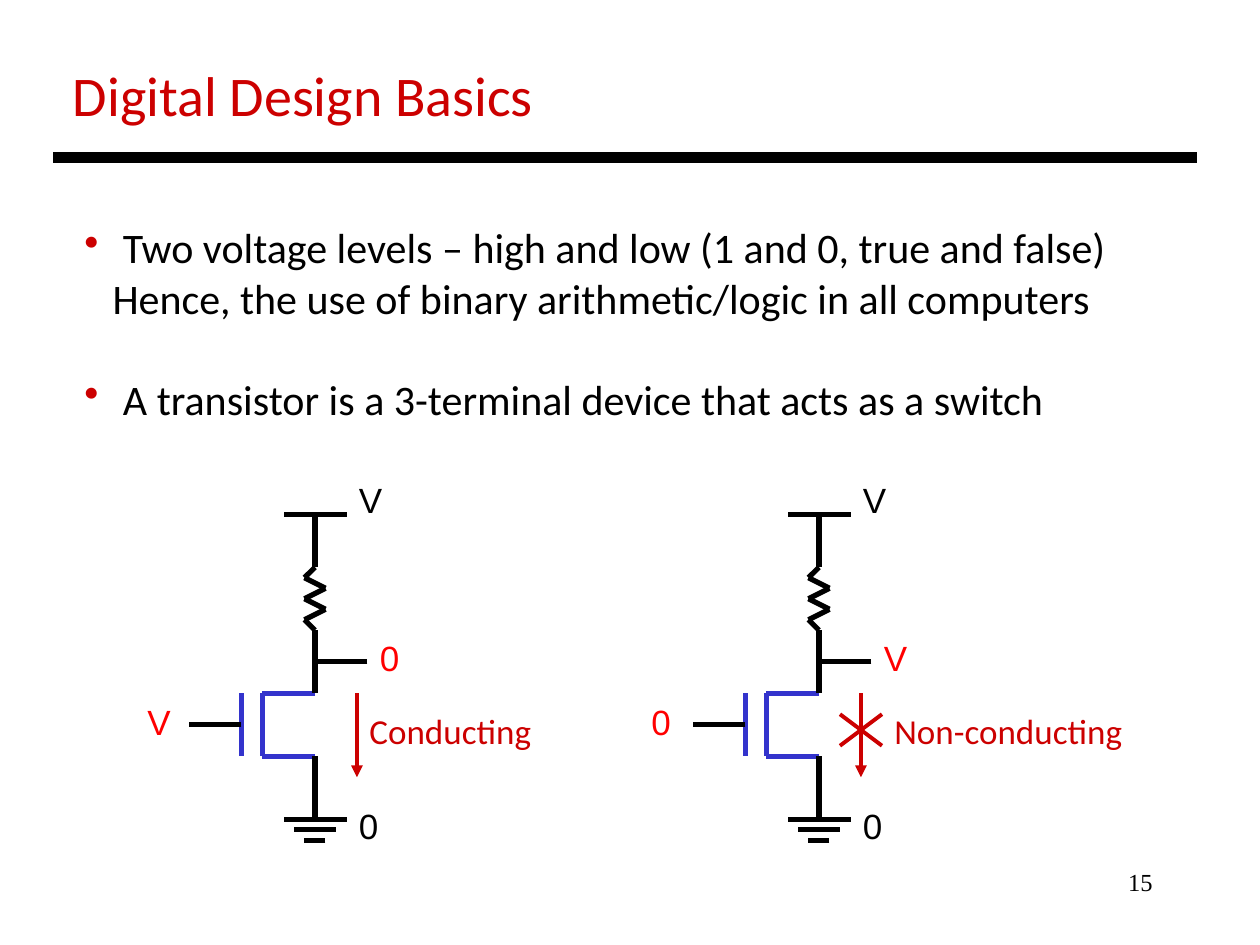
from dataclasses import dataclass
from itertools import pairwise

from lxml import etree
from pptx import Presentation
from pptx.dml.color import RGBColor
from pptx.enum.shapes import MSO_CONNECTOR
from pptx.enum.text import MSO_AUTO_SIZE, PP_ALIGN
from pptx.oxml.ns import qn
from pptx.util import Cm, Pt

STRAIGHT = MSO_CONNECTOR.STRAIGHT
FIT_SHAPE = MSO_AUTO_SIZE.SHAPE_TO_FIT_TEXT
NO_FIT = MSO_AUTO_SIZE.NONE
LEFT, RIGHT = PP_ALIGN.LEFT, PP_ALIGN.RIGHT
GRID = Cm(2.54) / 12


@dataclass(frozen=True)
class Theme:
    ink: str = "000000"
    accent: str = "CC0000"
    signal: str = "FF0000"
    channel: str = "3333CC"
    text_font: str = "Calibri"
    label_font: str = "Arial"
    number_font: str = "Times New Roman"
    title_size: float = 32
    body_size: float = 24
    label_size: float = 20
    number_size: float = 14
    rule_width: float = 6
    wire_width: float = 3
    arrow_width: float = 2.25


THEME = Theme()


def add_line(slide, start, end, color, width, arrow=False):
    line = slide.shapes.add_connector(STRAIGHT, *map(round, (*start, *end)))
    line.line.color.rgb = RGBColor.from_string(color)
    line.line.width = Pt(width)
    properties = line._element.spPr
    if arrow:
        outline = properties.find(qn("a:ln"))
        etree.SubElement(outline, qn("a:tailEnd"), type="triangle")
    etree.SubElement(properties, qn("a:effectLst"))


def add_text_box(slide, box, wrap=False):
    shape = slide.shapes.add_textbox(*map(round, box))
    frame = shape.text_frame
    frame.word_wrap = wrap
    frame.auto_size = NO_FIT if wrap else FIT_SHAPE
    return frame


def add_run(paragraph, text, font, size, color, alignment=LEFT):
    paragraph.alignment = alignment
    run = paragraph.add_run()
    run.text = text
    run.font.name = font
    run.font.size = Pt(size)
    run.font.color.rgb = RGBColor.from_string(color)


def add_bullet(paragraph, color):
    properties = paragraph._p.get_or_add_pPr()
    bullet_color = etree.SubElement(properties, qn("a:buClr"))
    etree.SubElement(bullet_color, qn("a:srgbClr"), val=color)
    etree.SubElement(properties, qn("a:buChar"), char="•")


def add_header(slide, left, top, width):
    frame = add_text_box(slide, (left + Cm(0.15), top, Cm(9.9), Cm(1.63)))
    add_run(frame.paragraphs[0], "Digital Design Basics",
            THEME.text_font, THEME.title_size, THEME.accent)
    rule_top = top + Cm(2.08)
    add_line(slide, (left, rule_top), (left + width, rule_top),
             THEME.ink, THEME.rule_width)


def add_body(slide, left, top, width, height):
    frame = add_text_box(slide, (left, top, width, height))
    lines = [
        ("Two voltage levels – high and low (1 and 0, true and false)", True, 0),
        ("Hence, the use of binary arithmetic/logic in all computers", False, 0),
        ("A transistor is a 3-terminal device that acts as a switch", True, 29),
    ]
    for index, (text, bulleted, space) in enumerate(lines):
        paragraph = frame.add_paragraph() if index else frame.paragraphs[0]
        add_run(paragraph, text, THEME.text_font, THEME.body_size, THEME.ink)
        paragraph.space_before = Pt(space)
        properties = paragraph._p.get_or_add_pPr()
        properties.set("marL", str(Cm(0.78) if bulleted else Cm(0.57)))
        properties.set("indent", str(-Cm(0.78) if bulleted else 0))
        if bulleted:
            add_bullet(paragraph, THEME.accent)


def add_circuit(slide, left, top, gate, output, state, state_column,
                state_width, blocked):
    def point(column, row):
        return left + column * GRID, top + row * GRID

    def wire(start, end, color=THEME.ink, width=THEME.wire_width, arrow=False):
        add_line(slide, point(*start), point(*end), color, width, arrow)

    def label(text, column, row, color, font=THEME.label_font, width=None):
        width = width or (Cm(0.99) if text == "V" else Cm(0.91))
        frame = add_text_box(slide, (*point(column, row), width, Cm(1.09)))
        add_run(frame.paragraphs[0], text, font, THEME.label_size, color)

    middle = 18
    for start, end in [((13, 21), (13, 27)), ((middle, 21), (13, 21)),
                       ((middle, 27), (13, 27)), ((11, 21), (11, 27))]:
        wire(start, end, THEME.channel)

    for start_row, end_row in [(4, 9), (15, 21), (27, 33)]:
        wire((middle, start_row), (middle, end_row))
    wire((11, 24), (6, 24))
    wire((23, 18), (middle, 18))

    for row, half in [(4, 3), (33, 3), (34, 2), (35, 1)]:
        wire((middle + half, row), (middle - half, row))

    offsets = [0, -1, 1, -1, 1, -1, 0]
    resistor = [(middle + offset, 9 + step) for step, offset in enumerate(offsets)]
    for start, end in pairwise(resistor):
        wire(start, end)

    label(gate, 0.85, 21.1, THEME.signal)
    label("V", 21, 0, THEME.ink)
    label("0", 21, 31, THEME.ink)
    label(output, 23, 15, THEME.signal)

    wire((22, 21), (22, 29), THEME.accent, THEME.arrow_width, arrow=True)
    label(state, state_column, 22, THEME.accent, THEME.text_font, state_width)
    if blocked:
        for start, end in [((20, 23), (24, 26)), ((24, 23), (20, 26))]:
            wire(start, end, THEME.accent, THEME.arrow_width)


def add_page_number(slide, left, top, width, height):
    frame = add_text_box(slide, (left, top, width, height), wrap=True)
    add_run(frame.paragraphs[0], "15", THEME.number_font, THEME.number_size,
            THEME.ink, RIGHT)


def main():
    presentation = Presentation()
    presentation.slide_width = Cm(25.4)
    presentation.slide_height = Cm(19.05)
    slide = presentation.slides.add_slide(presentation.slide_layouts[6])

    add_page_number(slide, Cm(18.2), Cm(17.36), Cm(5.29), Cm(1.27))
    add_header(slide, Cm(1.07), Cm(1.1), Cm(23.07))
    add_body(slide, Cm(1.45), Cm(4.35), Cm(21.13), Cm(4.37))
    add_circuit(slide, Cm(2.54), Cm(9.53), "V", "0", "Conducting",
                22, Cm(3.81), False)
    add_circuit(slide, Cm(12.7), Cm(9.53), "0", "V", "Non-conducting",
                24, Cm(5.16), True)

    presentation.save("out.pptx")


if __name__ == "__main__":
    main()
